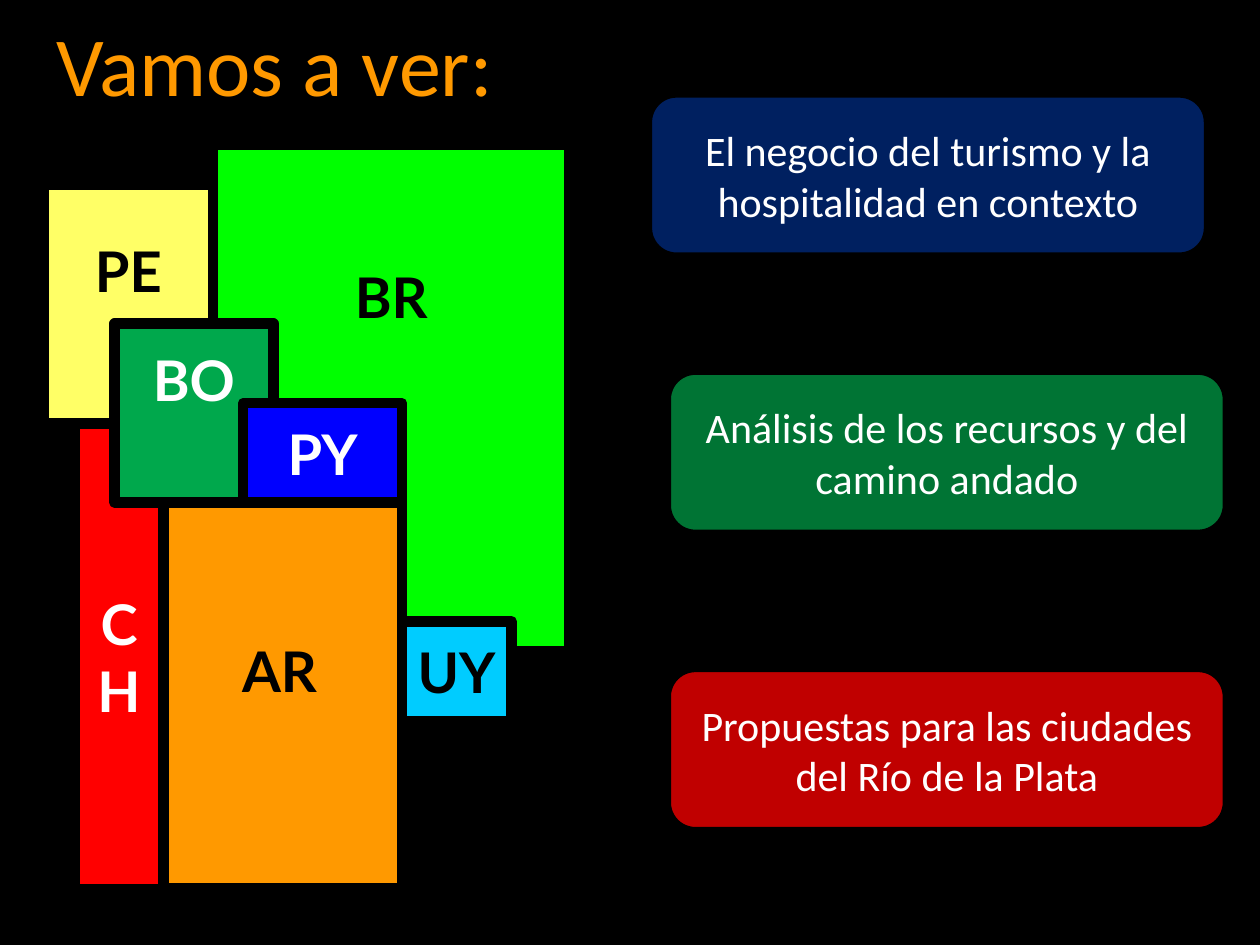
"""Build the agenda slide with a block map of South American countries."""
from pptx import Presentation
from pptx import util as u
from pptx.dml.color import RGBColor
from pptx.enum import shapes, text

COLORS = {
    "black": "000000", "white": "FFFFFF", "orange": "FF9900",
    "yellow": "FFFF66", "lime": "00FF00", "cyan": "00CCFF",
    "red": "FF0000", "green": "00A84C", "blue": "0000FF",
    "forest": "007434", "navy": "002060", "crimson": "C00000",
}
LINE_HEIGHT = 39
COUNTRY_SIZE = 32
TOPIC_WIDTH, TOPIC_HEIGHT = 317.5, 90.7

COUNTRIES = [
    ("PE", 25.2, 105.8, 96.5, 136.1, "yellow", "black", 1, 0),
    ("BR", 121.7, 82.8, 203.8, 289.4, "lime", "black", 3, 0),
    ("UY", 229.7, 355, 62.6, 56.9, "cyan", "black", 0, 0),
    ("AR", 59.8, 258.5, 169.9, 249.1, "orange", "black", 0, 30),
    ("CH", 42.5, 241.9, 51.1, 266.4, "red", "white", 0, 0),
    ("BO", 65.5, 185, 90.7, 102.2, "green", "white", 1, 0),
    ("PY", 139, 230.4, 90.7, 56.9, "blue", "white", 0, 0),
]
TOPICS = [
    ("Análisis de los recursos y del camino andado", 382.3, 213.1, "forest"),
    ("El negocio del turismo y la hospitalidad en contexto", 371.5, 54.7, "navy"),
    ("Propuestas para las ciudades del Río de la Plata", 382.3, 383, "crimson"),
]


class SlideBuilder:
    """Hold the style and the current slide."""

    def __init__(self, presentation):
        self.map_font = "Lato"
        self.body_font = "Calibri"
        self.slide = presentation.slides.add_slide(presentation.slide_layouts[6])
        self.paint(self.slide.background.fill, "black")

    def paint(self, fill, color):
        fill.solid()
        fill.fore_color.rgb = RGBColor.from_string(COLORS[color])

    def set_text(self, text_frame, wording, font_name, size, color, bold=False):
        text_frame.text = wording
        font = text_frame.paragraphs[0].runs[0].font
        font.name, font.size, font.bold = font_name, u.Pt(size), bold
        font.color.rgb = RGBColor.from_string(COLORS[color])

    def block(self, kind, left, top, width, height, color, border):
        shape = self.slide.shapes.add_shape(
            kind, u.Pt(left), u.Pt(top), u.Pt(width), u.Pt(height))
        shape.shadow.inherit = False
        self.paint(shape.fill, color)
        self.paint(shape.line.fill, "black")
        shape.line.width = u.Pt(border)
        shape.text_frame.word_wrap = True
        shape.text_frame.vertical_anchor = text.MSO_ANCHOR.MIDDLE
        return shape

    def country(self, code, left, top, width, height, color, ink, lines_up, indent):
        shape = self.block(shapes.MSO_SHAPE.RECTANGLE, left, top, width, height, color, 6)
        text_frame = shape.text_frame
        text_frame.margin_bottom = u.Pt(3.6 + lines_up * LINE_HEIGHT)
        text_frame.margin_left = u.Pt(7.2 + indent)
        self.set_text(text_frame, code, self.map_font, COUNTRY_SIZE, ink, bold=True)
        text_frame.paragraphs[0].alignment = text.PP_ALIGN.CENTER

    def topic(self, wording, left, top, color):
        shape = self.block(shapes.MSO_SHAPE.ROUNDED_RECTANGLE, left, top,
                           TOPIC_WIDTH, TOPIC_HEIGHT, color, 2.25)
        self.set_text(shape.text_frame, wording, self.body_font, 24, "white")
        shape.text_frame.paragraphs[0].alignment = text.PP_ALIGN.CENTER

    def title(self, wording, left, top, width, height):
        shape = self.slide.shapes.add_textbox(
            u.Pt(left), u.Pt(top), u.Pt(width), u.Pt(height))
        shape.text_frame.word_wrap = False
        shape.text_frame.auto_size = text.MSO_AUTO_SIZE.SHAPE_TO_FIT_TEXT
        self.set_text(shape.text_frame, wording, self.body_font, 48, "orange")


def main():
    presentation = Presentation()
    presentation.slide_width, presentation.slide_height = u.Pt(720), u.Pt(540)
    builder = SlideBuilder(presentation)
    for country in COUNTRIES:
        builder.country(*country)
    builder.title("Vamos a ver:", 25.2, 3.6, 272.9, 65.5)
    for topic in TOPICS:
        builder.topic(*topic)
    presentation.save("out.pptx")


if __name__ == "__main__":
    main()
